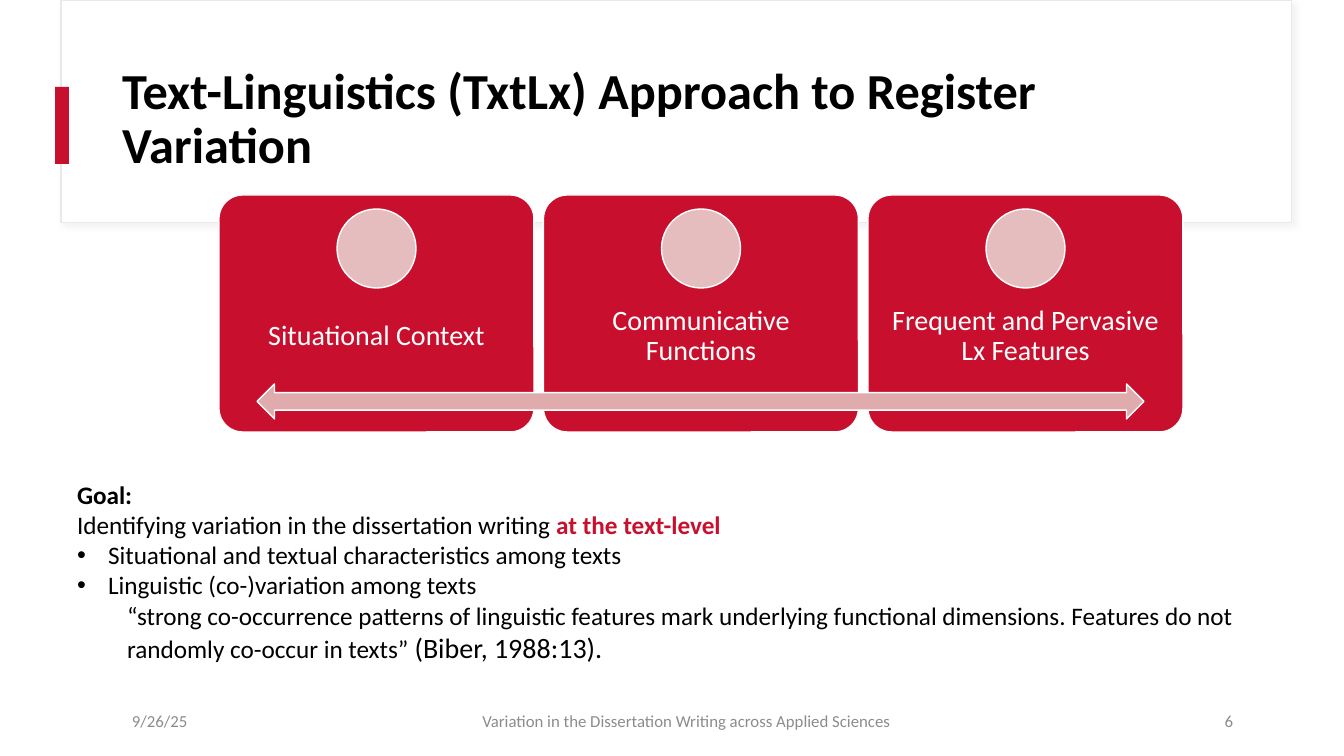
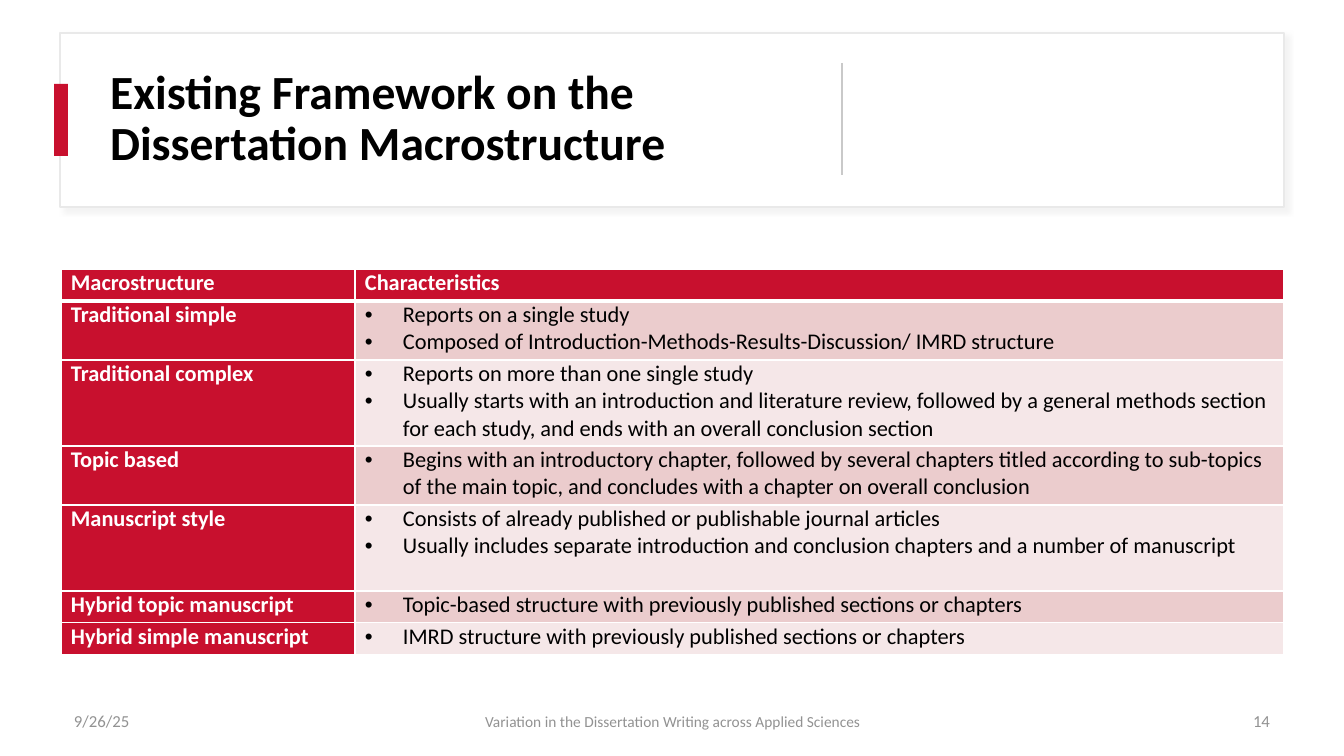
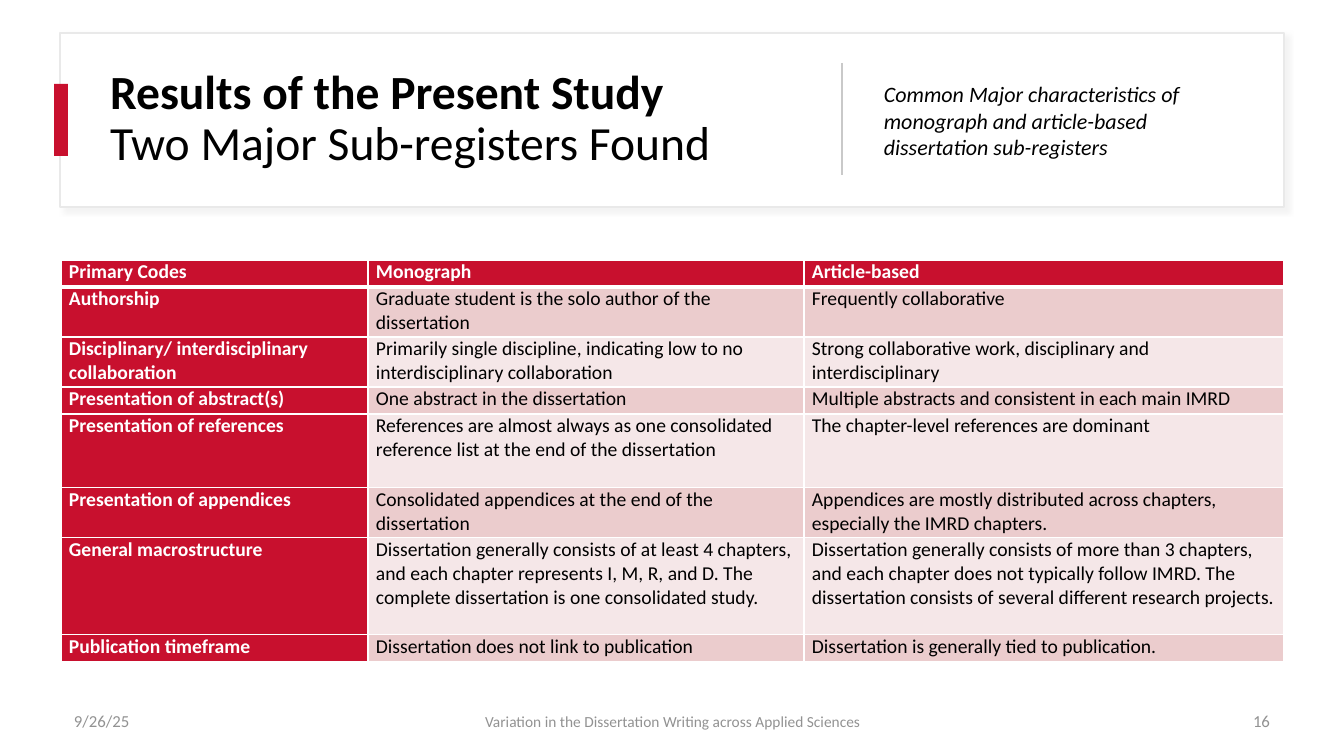
"""Build three slides on register variation in dissertation writing."""
from lxml import etree
from pptx import Presentation
from pptx.dml.color import RGBColor
from pptx.enum.shapes import MSO_CONNECTOR, MSO_SHAPE
from pptx.enum.text import MSO_ANCHOR, MSO_AUTO_SIZE, PP_ALIGN
from pptx.oxml.ns import qn
from pptx.util import Pt

LEFT, CENTER, RIGHT = PP_ALIGN.LEFT, PP_ALIGN.CENTER, PP_ALIGN.RIGHT
TOP, MIDDLE = MSO_ANCHOR.TOP, MSO_ANCHOR.MIDDLE
RECT, ROUND, OVAL = MSO_SHAPE.RECTANGLE, MSO_SHAPE.ROUNDED_RECTANGLE, MSO_SHAPE.OVAL
ARROW = MSO_SHAPE.LEFT_RIGHT_ARROW
STRAIGHT = MSO_CONNECTOR.STRAIGHT
NO_FIT = MSO_AUTO_SIZE.NONE

PX = 914400 / 100.8
FONT = "Calibri"
COLORS = {
    "red": "C8102E", "white": "FFFFFF", "black": "000000", "frame": "E9E9E9",
    "shadow": "D9D9D9", "divider": "C9C9C9", "circle": "E6BDBE", "arrow": "E0ABAD",
    "band_dark": "EBCCCD", "band_light": "F5E7E8",
    "footer_dark": "8C8C8C", "footer_light": "929292",
}
BOLD = {"bold": True}

DATE = "9/26/25"
FOOTER = "Variation in the Dissertation Writing across Applied Sciences"

OVERVIEW = {
    "card": (61, 0, 1231, 223), "card_line": 0.75, "accent": (55, 87, 14, 77),
    "title": (112, 55, 1121, 130), "title_size": 36,
    "footer_color": "footer_dark", "footer_size": 12,
    "footer": ((122, 302), (424, 525), (941, 302)),
}
TABLE_PAGE = {
    "card": (60, 33, 1224, 174), "card_line": 1, "accent": (54, 84, 14, 72),
    "title": (100, 44, 709, 151), "title_size": 34, "divider": (842, 63, 175),
    "footer_color": "footer_light", "footer_size": 11,
    "footer": ((64, 302), (446, 454), (978, 302)),
}

STEPS = ["Situational Context", "Communicative Functions",
         "Frequent and Pervasive Lx Features"]
STEP_ROW = {"left": 219, "top": 195, "width": 964, "box": 315, "height": 237}
CIRCLE = 79

GOAL = [
    {"runs": [("Goal:", BOLD)]},
    {"runs": [("Identifying variation in the dissertation writing ", {}),
              ("at the text-level", {"bold": True, "color": "red"})]},
    {"runs": [("Situational and textual characteristics among texts", {})], "bullet": 31},
    {"runs": [("Linguistic (co-)variation among texts", {})], "bullet": 31},
    {"runs": [("“strong co-occurrence patterns of linguistic features mark underlying "
               "functional dimensions. Features do not randomly co-occur in texts” ", {}),
              ("(Biber, 1988:13).", {"size": 20})], "level": 1, "indent": 50},
]

FRAMEWORK = {
    "top": 269, "size": 16, "inset": 10, "cols": (294, 929),
    "rows": (32, 59, 86, 59, 86, 32, 32),
    "cells": [
        ("Macrostructure", "Characteristics"),
        ("Traditional simple", [
            "Reports on a single study",
            "Composed of Introduction-Methods-Results-Discussion/ IMRD structure"]),
        ("Traditional complex", [
            "Reports on more than one single study",
            "Usually starts with an introduction and literature review, followed by a general "
            "methods section for each study, and ends with an overall conclusion section"]),
        ("Topic based", [
            "Begins with an introductory chapter, followed by several chapters titled according "
            "to sub-topics of the main topic, and concludes with a chapter on overall conclusion"]),
        ("Manuscript style", [
            "Consists of already published or publishable journal articles",
            "Usually includes separate introduction and conclusion chapters and a number of "
            "manuscript"]),
        ("Hybrid topic manuscript", [
            "Topic-based structure with previously published sections or chapters"]),
        ("Hybrid simple manuscript", [
            "IMRD structure with previously published sections or chapters"]),
    ],
}

SUBREGISTERS = {
    "top": 260, "size": 14, "inset": 8, "cols": (307, 436, 480),
    "rows": (27, 50, 50, 27, 74, 50, 97, 27),
    "cells": [
        ("Primary Codes", "Monograph", "Article-based"),
        ("Authorship", "Graduate student is the solo author of the dissertation",
         "Frequently collaborative"),
        ("Disciplinary/ interdisciplinary collaboration",
         "Primarily single discipline, indicating low to no interdisciplinary collaboration",
         "Strong collaborative work, disciplinary and interdisciplinary"),
        ("Presentation of abstract(s)", "One abstract in the dissertation",
         "Multiple abstracts and consistent in each main IMRD"),
        ("Presentation of references",
         "References are almost always as one consolidated reference list at the end of the "
         "dissertation",
         "The chapter-level references are dominant"),
        ("Presentation of appendices", "Consolidated appendices at the end of the dissertation",
         "Appendices are mostly distributed across chapters, especially the IMRD chapters."),
        ("General macrostructure",
         "Dissertation generally consists of at least 4 chapters, and each chapter represents "
         "I, M, R, and D. The complete dissertation is one consolidated study.",
         "Dissertation generally consists of more than 3 chapters, and each chapter does not "
         "typically follow IMRD. The dissertation consists of several different research "
         "projects."),
        ("Publication timeframe", "Dissertation does not link to publication",
         "Dissertation is generally tied to publication."),
    ],
}
SUBTITLE = ("Common Major characteristics of monograph and article-based "
            "dissertation sub-registers")


def emu(px):
    return round(px * PX)


def rgb(name):
    return RGBColor.from_string(COLORS[name])


def sub(parent, tag, **attrs):
    return etree.SubElement(parent, qn(tag), {k: str(v) for k, v in attrs.items()})


def plain(*texts, **fmt):
    return [{"runs": [(text, fmt)]} for text in texts]


def set_bullet(p, hang, indent):
    pPr = p._p.get_or_add_pPr()
    pPr.set("marL", str(emu(hang or indent)))
    pPr.set("indent", str(-emu(hang)))
    if hang:
        sub(pPr, "a:buFont", typeface="Arial")
        sub(pPr, "a:buChar", char="•")
    else:
        sub(pPr, "a:buNone")


def write(tf, paras, size, color="black", align=LEFT, spacing=1.0):
    for i, para in enumerate(paras):
        p = tf.paragraphs[0] if i == 0 else tf.add_paragraph()
        p.level = para.get("level", 0)
        set_bullet(p, para.get("bullet", 0), para.get("indent", 0))
        p.alignment, p.line_spacing = align, spacing
        p.space_before = p.space_after = Pt(0)
        for text, changes in para["runs"]:
            fmt = {"size": size, "color": color, "bold": False, "italic": False, **changes}
            r = p.add_run()
            r.text = text
            r.font.color.rgb = rgb(fmt.pop("color"))
            r.font.size = Pt(fmt.pop("size"))
            r.font.name = FONT
            for name, value in fmt.items():
                setattr(r.font, name, value)


def place(sp, box):
    for name, value in zip(("left", "top", "width", "height"), box):
        setattr(sp, name, emu(value))


def set_frame(tf, anchor):
    tf.word_wrap, tf.auto_size, tf.vertical_anchor = True, NO_FIT, anchor


def add_text(s, box, paras, size, inset=None, **fmt):
    tf = s.shapes.add_textbox(*map(emu, box)).text_frame
    set_frame(tf, MIDDLE)
    if inset:
        tf.margin_left = tf.margin_right = tf.margin_top = tf.margin_bottom = emu(inset)
    write(tf, paras, size, **fmt)


def add_box(s, kind, box, fill, line=None, width=1):
    sp = s.shapes.add_shape(kind, *map(emu, box))
    sp.shadow.inherit = False
    sp.fill.solid()
    sp.fill.fore_color.rgb = rgb(fill)
    if line:
        sp.line.color.rgb = rgb(line)
        sp.line.width = Pt(width)
    else:
        sp.line.fill.background()
    return sp


def add_card(s, box, width):
    sp = add_box(s, RECT, box, "white", "frame", width)
    effects = sp._element.spPr.find(qn("a:effectLst"))
    shadow = sub(effects, "a:outerShdw", blurRad=Pt(4), dist=Pt(3), dir=45 * 60000,
                 algn="tl", rotWithShape=0)
    sub(sub(shadow, "a:srgbClr", val=COLORS["shadow"]), "a:alpha", val=30000)


def add_page(prs, layout, style, title, number):
    s = prs.slides.add_slide(prs.slide_layouts[layout])
    add_card(s, style["card"], style["card_line"])
    add_box(s, RECT, style["accent"], "red")
    if "divider" in style:
        x, top, bottom = style["divider"]
        cn = s.shapes.add_connector(STRAIGHT, emu(x), emu(top), emu(x), emu(bottom))
        cn.line.color.rgb = rgb("divider")
        cn.line.width = Pt(0.75)
        sub(cn._element.spPr, "a:effectLst")
    sp = s.shapes.title
    s.shapes.element.append(sp._element)
    place(sp, style["title"])
    set_frame(sp.text_frame, MIDDLE)
    write(sp.text_frame, title, style["title_size"], spacing=0.9)
    sizes = (12, style["footer_size"], 12)
    for (x, w), text, size, align in zip(style["footer"], (DATE, FOOTER, number), sizes,
                                         (LEFT, CENTER, RIGHT)):
        add_text(s, (x, 701, w, 40), plain(text), size, color=style["footer_color"], align=align)
    return s


def add_steps(s):
    left, top, width, box, height = STEP_ROW.values()
    pitch = (width - box) / (len(STEPS) - 1)
    for i, label in enumerate(STEPS):
        x = left + i * pitch
        add_box(s, ROUND, (x, top, box, height), "red", "white").adjustments[0] = 0.1
        add_text(s, (x, top + 94, box, 95), plain(label), 20, inset=16,
                 color="white", align=CENTER, spacing=0.9)
        add_box(s, OVAL, (x + (box - CIRCLE) / 2, top + 14, CIRCLE, CIRCLE), "circle", "white")
    add_box(s, ARROW, (left + 38, top + 189, width - 77, 35), "arrow", "white")


def set_borders(cell, row):
    tcPr = cell._tc.get_or_add_tcPr()
    widths = {"L": 1, "R": 1, "T": 3 if row == 1 else 1, "B": 3 if row == 0 else 1}
    for side, width in widths.items():
        ln = sub(tcPr, "a:ln" + side, w=Pt(width))
        sub(sub(ln, "a:solidFill"), "a:srgbClr", val=COLORS["white"])


def add_grid(s, data):
    rows, cols, inset = data["rows"], data["cols"], emu(data["inset"])
    box = (61, data["top"], sum(cols), sum(rows))
    table = s.shapes.add_table(len(rows), len(cols), *map(emu, box)).table
    table.horz_banding = False
    for col, width in zip(table.columns, cols):
        col.width = emu(width)
    for i, (row, height, texts) in enumerate(zip(table.rows, rows, data["cells"])):
        row.height = emu(height)
        for j, (cell, text) in enumerate(zip(row.cells, texts)):
            head = i == 0 or j == 0
            cell.margin_left = cell.margin_right = inset
            cell.margin_top = cell.margin_bottom = 0
            cell.vertical_anchor = TOP
            set_borders(cell, i)
            cell.fill.solid()
            cell.fill.fore_color.rgb = rgb("red" if head else
                                           "band_dark" if i % 2 else "band_light")
            if isinstance(text, list):
                paras = [{**p, "bullet": 38} for p in plain(*text)]
            else:
                paras = plain(text, bold=head)
            write(cell.text_frame, paras, data["size"], color="white" if head else "black")


def main():
    prs = Presentation()
    prs.slide_width, prs.slide_height = emu(1344), emu(756)

    s = add_page(prs, 1, OVERVIEW, plain(
        "Text-Linguistics (TxtLx) Approach to Register Variation", bold=True), "6")
    add_steps(s)
    body = s.placeholders[1]
    place(body, (67, 474, 1212, 228))
    set_frame(body.text_frame, TOP)
    write(body.text_frame, GOAL, 18)

    s = add_page(prs, 5, TABLE_PAGE, plain(
        "Existing Framework on the Dissertation Macrostructure", bold=True), "14")
    add_grid(s, FRAMEWORK)

    s = add_page(prs, 5, TABLE_PAGE, plain("Results of the Present Study", bold=True)
                 + plain("Two Major Sub-registers Found"), "16")
    add_text(s, (874, 55, 319, 131), plain(SUBTITLE, italic=True), 15.7)
    add_grid(s, SUBREGISTERS)

    prs.save("out.pptx")


if __name__ == "__main__":
    main()
